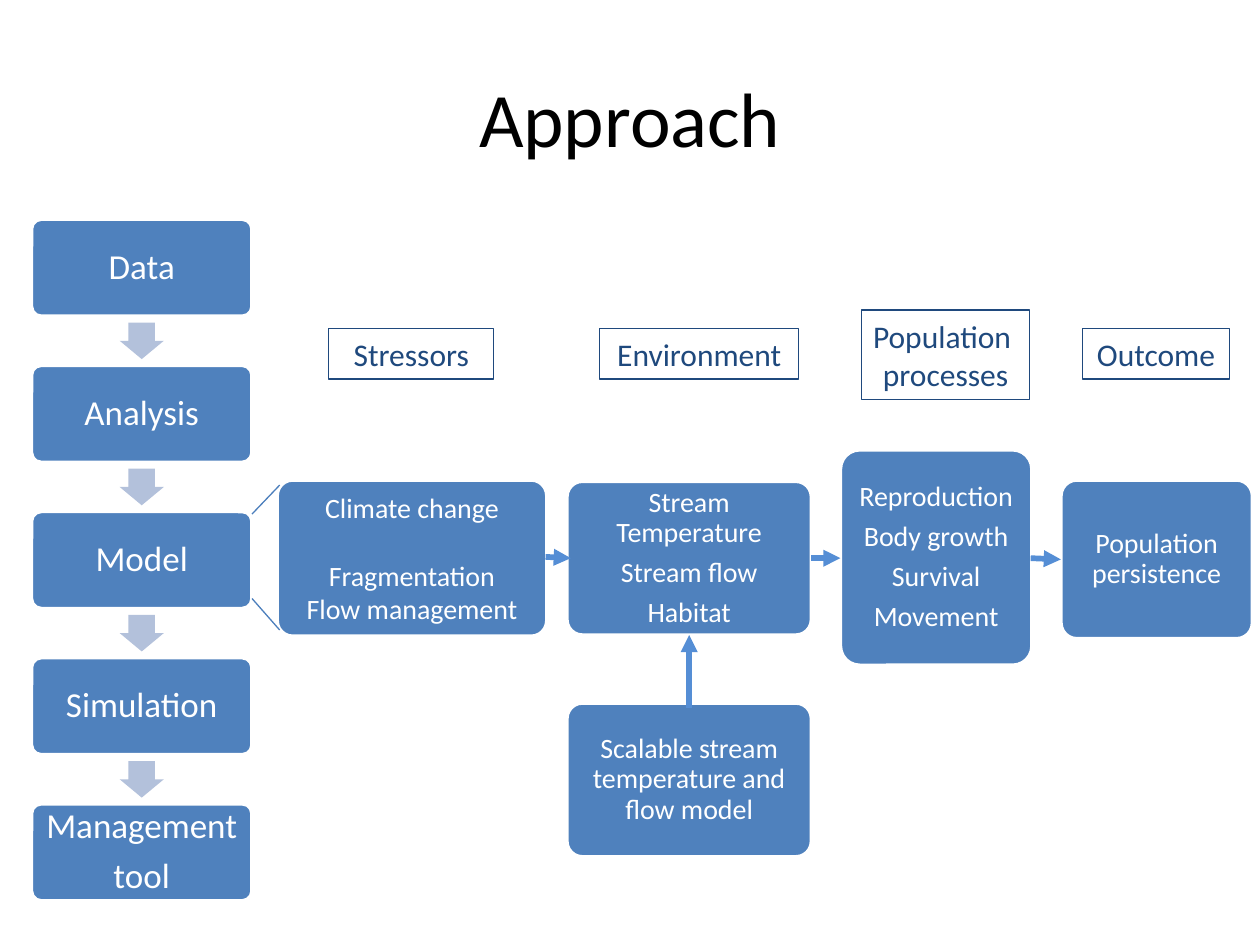
import dataclasses

import pptx
import pptx.dml.color
import pptx.enum.shapes
import pptx.enum.text
import pptx.oxml
import pptx.oxml.ns
import pptx.util

SHAPE = pptx.enum.shapes.MSO_SHAPE
COLOURS = {
    "title": "000000", "box": "4F81BD", "white": "FFFFFF", "step": "B3C1DB",
    "label": "1F497D", "flow": "558ED5", "zoom": "4B7EBC",
}
FONT = "Calibri"
COLS, ROWS = 100, 75  # square grid cells over the slide
STEP_ROW, STEP_PITCH, STEP_HEIGHT = 17.4, 11.6, 7.7
STEP_COL, STEP_WIDTH = 2.5, 17.5

prs = pptx.Presentation()
prs.slide_width = pptx.util.Inches(10)
prs.slide_height = pptx.util.Inches(7.5)


@dataclasses.dataclass(frozen=True)
class Area:
    """A rectangle in grid columns and rows."""
    col: float
    row: float
    width: float
    height: float


@dataclasses.dataclass(frozen=True)
class TextStyle:
    size: float
    colour: str
    spacing: float = 1.0
    gap: float = 0


@dataclasses.dataclass(frozen=True)
class Box:
    area: Area
    lines: tuple[str, ...]
    style: TextStyle
    corner: float = 0.1


@dataclasses.dataclass(frozen=True)
class Link:
    start: tuple[float, float]
    end: tuple[float, float]


TITLE = TextStyle(44, "title")
STEP = TextStyle(20, "white", 0.9, 7)
BODY = TextStyle(16, "white", 0.9, 5.5)
STRESSOR = TextStyle(16, "white")
LABEL = TextStyle(18, "label")

STEPS = (("Data",), ("Analysis",), ("Model",), ("Simulation",), ("Management ", "tool"))
BOXES = (
    Box(Area(66.7, 35.7, 15.2, 17.1),
        ("Reproduction", "Body growth", "Survival", "Movement"), BODY),
    Box(Area(84.2, 38.1, 15.2, 12.6), ("Population persistence",), BODY),
    Box(Area(45, 38.2, 19.4, 12.2),
        ("Stream Temperature", "Stream flow", "Habitat"), BODY),
    Box(Area(22, 38.1, 21.4, 12.4),
        ("Climate change", "Fragmentation", "Flow management"), STRESSOR),
    Box(Area(45, 55.8, 19.4, 12.2),
        ("Scalable stream temperature and flow model",), BODY),
)
LABELS = (
    Box(Area(26.1, 26.1, 13.1, 4), ("Stressors",), LABEL),
    Box(Area(47.6, 26.1, 15.8, 4), ("Environment",), LABEL),
    Box(Area(68.4, 24.6, 13.3, 7.1), ("Population ", "processes"), LABEL),
    Box(Area(85.9, 26.1, 11.7, 4), ("Outcome",), LABEL),
)
FLOWS = (
    Link((43.3, 44.2), (45.3, 44.3)),
    Link((64.4, 44.3), (66.7, 44.3)),
    Link((81.8, 44.3), (84.2, 44.4)),
    Link((54.7, 56.2), (54.7, 50.4)),
)
ZOOM_LINES = (Link((20, 40.8), (22.2, 38.5)), Link((20, 47.5), (22.2, 50)))


def x(col: float) -> int:
    return round(prs.slide_width * col / COLS)


def y(row: float) -> int:
    return round(prs.slide_height * row / ROWS)


def rgb(name: str) -> pptx.dml.color.RGBColor:
    return pptx.dml.color.RGBColor.from_string(COLOURS[name])


def write(sp, lines: tuple[str, ...], style: TextStyle):
    tf = sp.text_frame
    tf.word_wrap = True
    tf.vertical_anchor = pptx.enum.text.MSO_ANCHOR.MIDDLE
    tf.margin_left = tf.margin_right = pptx.util.Inches(0.07)
    tf.margin_top = tf.margin_bottom = pptx.util.Inches(0.05)
    for i, line in enumerate(lines):
        p = tf.add_paragraph() if i else tf.paragraphs[0]
        p.alignment = pptx.enum.text.PP_ALIGN.CENTER
        p.line_spacing = style.spacing
        p.space_after = pptx.util.Pt(style.gap if i < len(lines) - 1 else 0)
        r = p.add_run()
        r.text = line
        r.font.name = FONT
        r.font.size = pptx.util.Pt(style.size)
        r.font.color.rgb = rgb(style.colour)


def add_shape(s, kind: SHAPE, area: Area, fill: str | None, line: str | None, width: float = 0):
    sp = s.shapes.add_shape(kind, x(area.col), y(area.row), x(area.width), y(area.height))
    sp.shadow.inherit = False
    if fill:
        sp.fill.solid()
        sp.fill.fore_color.rgb = rgb(fill)
    else:
        sp.fill.background()
    if line:
        sp.line.color.rgb = rgb(line)
        sp.line.width = pptx.util.Pt(width)
    else:
        sp.line.fill.background()
    return sp


def add_box(s, box: Box):
    sp = add_shape(s, SHAPE.ROUNDED_RECTANGLE, box.area, "box", "white", 2)
    sp.adjustments[0] = box.corner
    write(sp, box.lines, box.style)
    return sp


def add_label(s, box: Box):
    sp = add_shape(s, SHAPE.RECTANGLE, box.area, None, "label", 0.75)
    write(sp, box.lines, box.style)


def add_step_arrow(s, row: float):
    width, height = 3.5, 2.9
    area = Area(STEP_COL + (STEP_WIDTH - width) / 2, row, width, height)
    sp = add_shape(s, SHAPE.DOWN_ARROW, area, "step", None)
    sp.adjustments[0], sp.adjustments[1] = 0.6, 0.5


def add_link(s, link: Link, colour: str, width: float, arrow: bool):
    cx = s.shapes.add_connector(
        pptx.enum.shapes.MSO_CONNECTOR.STRAIGHT,
        x(link.start[0]), y(link.start[1]), x(link.end[0]), y(link.end[1]))
    cx.line.color.rgb = rgb(colour)
    cx.line.width = pptx.util.Pt(width)
    if arrow:
        ns = pptx.oxml.ns.nsdecls("a")
        cx.line._get_or_add_ln().append(
            pptx.oxml.parse_xml(f'<a:tailEnd {ns} type="triangle"/>'))
    cx._element.spPr.append(
        pptx.oxml.parse_xml(f'<a:effectLst {pptx.oxml.ns.nsdecls("a")}/>'))


def main():
    s = prs.slides.add_slide(prs.slide_layouts[6])
    write(s.shapes.add_textbox(x(5), y(3), x(90), y(12.5)), ("Approach",), TITLE)
    for i, lines in enumerate(STEPS):
        row = STEP_ROW + i * STEP_PITCH
        add_box(s, Box(Area(STEP_COL, row, STEP_WIDTH, STEP_HEIGHT), lines, STEP))
        if i < len(STEPS) - 1:
            add_step_arrow(s, row + STEP_HEIGHT + 0.5)
    for box in BOXES:
        sp = add_box(s, box)
        if box.style is STRESSOR:  # sets climate apart from local stressors
            sp.text_frame.paragraphs[0].space_after = pptx.util.Pt(19.5)
    for label in LABELS:
        add_label(s, label)
    for link in FLOWS:
        add_link(s, link, "flow", 3.25, arrow=True)
    for link in ZOOM_LINES:
        add_link(s, link, "zoom", 0.75, arrow=False)
    prs.save("out.pptx")


if __name__ == "__main__":
    main()
